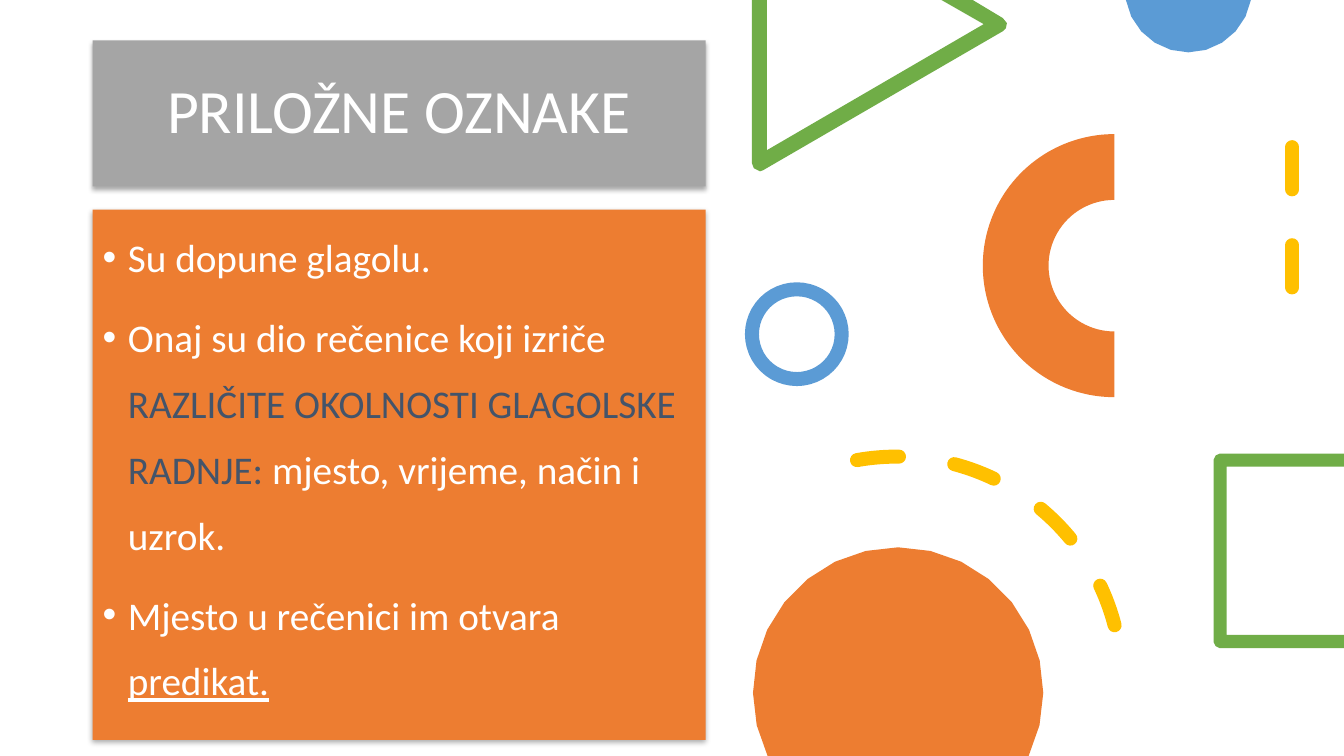
import math
from dataclasses import dataclass

import pptx
import pptx.dml.color
import pptx.enum.dml
import pptx.enum.shapes
import pptx.enum.text
import pptx.oxml
import pptx.oxml.ns
import pptx.util
from lxml import etree

COLUMNS, ROWS = 40 / 3, 7.5
CELL = pptx.util.Inches(1)
SHAPE = pptx.enum.shapes.MSO_SHAPE


@dataclass(frozen=True)
class Theme:
    font: str = "Calibri"
    title_size: int = 44
    body_size: int = 28
    stroke: int = 10
    white: str = "FFFFFF"
    slate: str = "44546A"
    gray: str = "A5A5A5"
    orange: str = "ED7D31"
    blue: str = "5B9BD5"
    green: str = "70AD47"
    yellow: str = "FFC000"


THEME = Theme()


@dataclass(frozen=True)
class Box:
    """Region measured in grid columns and rows."""
    left: float
    top: float
    width: float
    height: float

    def place(self, x, y):
        return round((self.left + x) * CELL), round((self.top + y) * CELL)


def rgb(code):
    return pptx.dml.color.RGBColor.from_string(code)


def paint(shape, fill=None, line=None):
    shape.shadow.inherit = False
    if fill:
        shape.fill.solid()
        shape.fill.fore_color.rgb = rgb(fill)
    else:
        shape.fill.background()
    if line:
        shape.line.color.rgb = rgb(line)
        shape.line.width = pptx.util.Pt(THEME.stroke)
    else:
        shape.line.fill.background()


def add_preset(slide, box, kind, x, y, width, height, **colors):
    shape = slide.shapes.add_shape(
        kind, *box.place(x, y), round(width * CELL), round(height * CELL))
    paint(shape, **colors)
    return shape


def drop_shadow(shape):
    effects = shape._element.spPr.find(pptx.oxml.ns.qn("a:effectLst"))
    effects.append(pptx.oxml.parse_xml(
        f'<a:outerShdw {pptx.oxml.ns.nsdecls("a")} blurRad="44450" dist="27940" '
        'dir="5400000" algn="ctr" rotWithShape="0"><a:srgbClr val="000000">'
        '<a:alpha val="32000"/></a:srgbClr></a:outerShdw>'))


def round_dashes(shape):
    shape.line.dash_style = pptx.enum.dml.MSO_LINE.DASH
    shape.line._ln.set("cap", "rnd")


def add_outline(slide, box, points, fill):
    first, *others = [box.place(*point) for point in points]
    builder = slide.shapes.build_freeform(*first, scale=1.0)
    builder.add_line_segments(others, close=True)
    paint(builder.convert_to_shape(), fill=fill)


def add_cut_circle(slide, box, x, y, radius, start, end, steps, fill):
    """Draw the part of a circle between two angles, closed by its chord."""
    angles = [math.radians(start + (end - start) * n / steps) for n in range(steps + 1)]
    add_outline(slide, box, [(x + radius * math.cos(a), y + radius * math.sin(a))
                             for a in angles], fill)


def add_run(paragraph, text, size, color, underline=None):
    run = paragraph.add_run()
    run.text = text
    run.font.name = THEME.font
    run.font.size = pptx.util.Pt(size)
    run.font.color.rgb = rgb(color)
    run.font.underline = underline


def add_panel(slide, box, fill, anchor):
    panel = add_preset(slide, box, SHAPE.RECTANGLE, 0, 0, box.width, box.height, fill=fill)
    drop_shadow(panel)
    panel.text_frame.word_wrap = True
    panel.text_frame.vertical_anchor = anchor
    return panel.text_frame


def add_title(slide, box):
    frame = add_panel(slide, box, THEME.gray, pptx.enum.text.MSO_ANCHOR.MIDDLE)
    paragraph = frame.paragraphs[0]
    paragraph.alignment = pptx.enum.text.PP_ALIGN.CENTER
    paragraph.line_spacing = 0.9
    add_run(paragraph, "PRILOŽNE OZNAKE", THEME.title_size, THEME.white)


def add_definition(slide, box):
    points = [
        [("Su dopune glagolu.", THEME.white)],
        [("Onaj su dio rečenice koji izriče ", THEME.white),
         ("RAZLIČITE OKOLNOSTI GLAGOLSKE RADNJE: ", THEME.slate),
         ("mjesto, vrijeme, način i uzrok.", THEME.white)],
        [("Mjesto u rečenici im otvara ", THEME.white), ("predikat.", THEME.white, True)],
    ]
    frame = add_panel(slide, box, THEME.orange, pptx.enum.text.MSO_ANCHOR.TOP)
    indent = round(CELL / 4)
    for number, runs in enumerate(points):
        paragraph = frame.add_paragraph() if number else frame.paragraphs[0]
        paragraph.alignment = pptx.enum.text.PP_ALIGN.LEFT
        paragraph.line_spacing = 1.4
        paragraph.space_before = pptx.util.Pt(10)
        properties = paragraph._p.get_or_add_pPr()
        properties.set("marL", str(indent))
        properties.set("indent", str(-indent))
        for tag, key, value in (("a:buFont", "typeface", "Arial"), ("a:buChar", "char", "•")):
            etree.SubElement(properties, pptx.oxml.ns.qn(tag)).set(key, value)
        for text, color, *underline in runs:
            add_run(paragraph, text, THEME.body_size, color, *underline)


def add_pattern(slide, box):
    """Scatter the geometric ornaments, cut off at the edges of the box."""
    right, bottom = box.width, box.height
    add_cut_circle(slide, box, 4.79, -0.11, 0.63, 10, 170, 10, THEME.blue)
    add_preset(slide, box, SHAPE.OVAL, 0.46, 2.87, 0.89, 0.89, line=THEME.blue)
    half_ring = add_preset(slide, box, SHAPE.BLOCK_ARC, 2.75, 1.33, 2.61, 2.61,
                           fill=THEME.orange)
    half_ring.rotation = 270

    triangle = [
        (0.46, 0), (0.61, 0), (0.61, 1.49), (2.76, 0.24), (2.34, 0), (2.65, 0),
        (2.95, 0.18), (2.99, 0.23), (2.98, 0.28), (2.95, 0.31),
        (0.57, 1.69), (0.54, 1.7), (0.48, 1.67), (0.46, 1.62)]
    add_outline(slide, box, triangle, THEME.green)

    dashes = slide.shapes.add_connector(
        pptx.enum.shapes.MSO_CONNECTOR.STRAIGHT, *box.place(5.82, 1.46), *box.place(5.82, 3.2))
    dashes.line.color.rgb = rgb(THEME.yellow)
    dashes.line.width = pptx.util.Pt(THEME.stroke)
    round_dashes(dashes)
    etree.SubElement(dashes._element.spPr, pptx.oxml.ns.qn("a:effectLst"))

    square = [
        (5.1, 4.5), (right, 4.5), (right, 4.63), (5.17, 4.63), (5.17, 6.3),
        (right, 6.3), (right, 6.43), (5.1, 6.43), (5.06, 6.41), (5.04, 6.37),
        (5.04, 4.56), (5.06, 4.52)]
    add_outline(slide, box, square, THEME.green)

    dashed_arc = add_preset(slide, box, SHAPE.ARC, -0.34, 4.53, 4.47, 4.47, line=THEME.yellow)
    dashed_arc.rotation = 349.9
    round_dashes(dashed_arc)

    center, radius = 6.87, 1.44
    cut = math.degrees(math.asin((bottom - center) / radius))
    add_cut_circle(slide, box, 1.91, center, radius, 180 - cut, 360 + cut, 18, THEME.orange)


def main():
    deck = pptx.Presentation()
    deck.slide_width, deck.slide_height = round(COLUMNS * CELL), round(ROWS * CELL)
    slide = deck.slides.add_slide(deck.slide_layouts[6])
    add_title(slide, Box(0.92, 0.4, 6.08, 1.45))
    add_definition(slide, Box(0.92, 2.08, 6.08, 5.26))
    add_pattern(slide, Box(7, 0, COLUMNS - 7, ROWS))
    deck.save("out.pptx")


if __name__ == "__main__":
    main()
